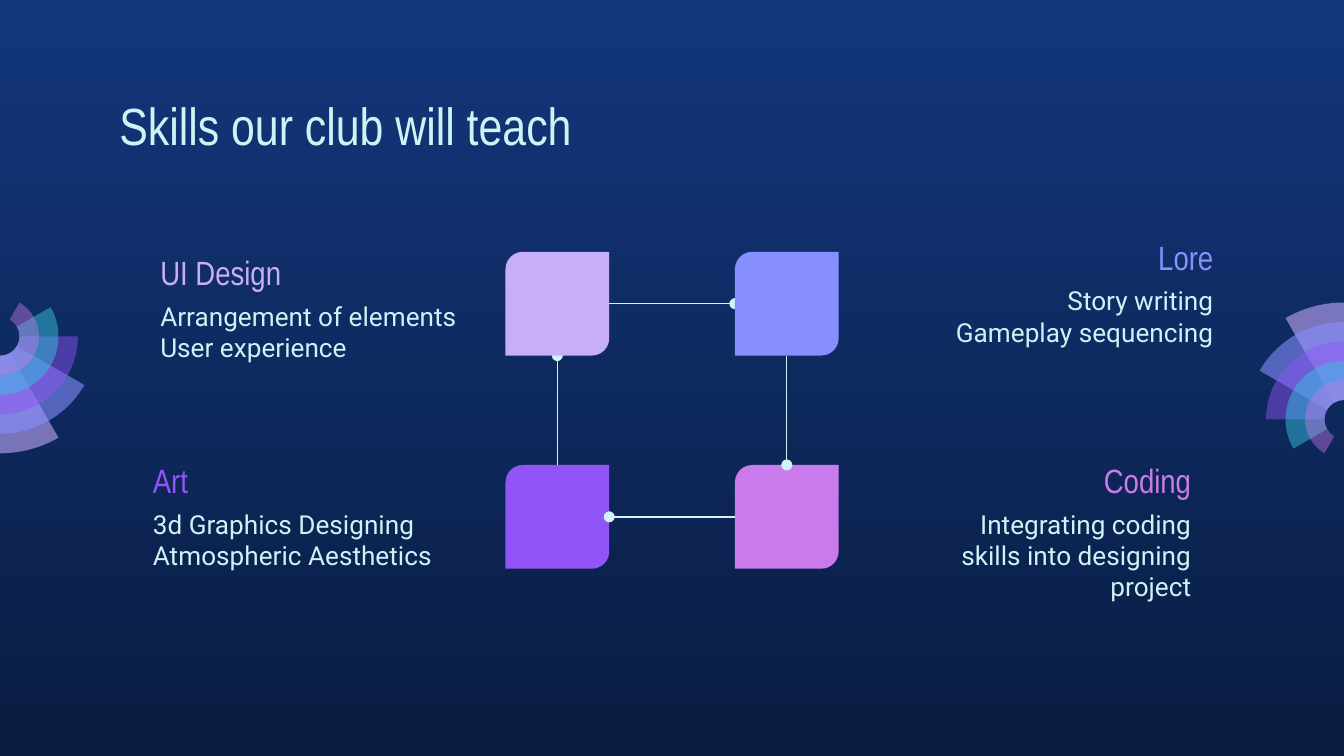
from dataclasses import dataclass
from math import cos, radians, sin, tan

from pptx import Presentation
from pptx.dml.color import RGBColor
from pptx.enum.shapes import MSO_CONNECTOR, MSO_SHAPE
from pptx.enum.text import MSO_ANCHOR, PP_ALIGN
from pptx.oxml.ns import qn
from pptx.util import Pt
from lxml.etree import SubElement


@dataclass(frozen=True)
class Theme:
    background_top: str = "13367C"
    background_bottom: str = "0A1D42"
    text: str = "CEF3F5"
    violet: str = "9154F8"
    lilac: str = "C8AEF8"
    periwinkle: str = "878FFF"
    orchid: str = "CA7BEB"
    fan_lilac: str = "C8ACFD"
    fan_cyan: str = "35C2DF"
    heading_font: str = "Arial Narrow"
    body_font: str = "Roboto"
    title_size: int = 28
    heading_size: int = 18
    body_size: int = 14


THEME = Theme()
SLIDE_WIDTH, SLIDE_HEIGHT = 720, 405
TILE = 55.6
LEFT_COLUMN, RIGHT_COLUMN = 270.8, 393.7
TOP_ROW, BOTTOM_ROW = 134.9, 249.1
FAN_STEP = 10.44
FAN_RINGS = [
    (THEME.fan_lilac, 58),
    (THEME.periwinkle, 58),
    (THEME.violet, 46),
    (THEME.fan_cyan, 49),
    (THEME.orchid, 42),
]


def paint(shape, color):
    shape.fill.solid()
    shape.fill.fore_color.rgb = RGBColor.from_string(color)
    shape.line.fill.background()
    shape.shadow.inherit = False


def set_background(slide):
    fill = slide.background.fill
    fill.gradient()
    fill.gradient_angle = 270
    colors = (THEME.background_top, THEME.background_bottom)
    for stop, color, position in zip(fill.gradient_stops, colors, (0, 1)):
        stop.color.rgb = RGBColor.from_string(color)
        stop.position = position


def arc_points(center, radius, angles):
    def point(angle, tangent=0):
        x = cos(radians(angle)) - tangent * sin(radians(angle))
        y = sin(radians(angle)) + tangent * cos(radians(angle))
        return 100 * (center[0] + radius * x), 100 * (center[1] + radius * y)

    points = [point(angles[0])]
    for start, end in zip(angles, angles[1:]):
        tangent = 4 / 3 * tan(radians(end - start) / 4)
        points += [point(start, tangent), point(end, -tangent), point(end)]
    return points


def curve_lines(outline, lines):
    for first, second, third in zip(lines[::3], lines[1::3], lines[2::3]):
        first.tag = qn("a:cubicBezTo")
        for line in (second, third):
            first.append(line[0])
            outline.remove(line)


def add_sector(slide, center, radius, start, end, color, opacity):
    angles = [start, *[angle for angle in (0, 180) if start < angle < end], end]
    outer = arc_points(center, radius, angles)
    inner = arc_points(center, FAN_STEP, angles[::-1])
    builder = slide.shapes.build_freeform(*outer[0], scale=Pt(0.01))
    builder.add_line_segments(outer[1:] + inner, close=True)
    shape = builder.convert_to_shape()
    outline = next(shape._element.iter(qn("a:path")))
    lines = outline.findall(qn("a:lnTo"))
    curve_lines(outline, lines[:len(outer) - 1])
    curve_lines(outline, lines[len(outer):len(outer) + len(inner) - 1])
    paint(shape, color)
    color_element = shape.fill._xPr.find(qn("a:solidFill"))[0]
    SubElement(color_element, qn("a:alpha"), val=str(opacity * 1000))


def add_fan(slide, center, turn):
    for index, (color, opacity) in enumerate(FAN_RINGS):
        start = turn + 60 - 30 * index if index < 4 else turn - 60
        add_sector(slide, center, FAN_STEP * (6 - index), start, turn + 90, color, opacity)


def add_text(slide, left, top, width, height, lines, font, size, color,
             alignment=PP_ALIGN.LEFT, anchor=MSO_ANCHOR.TOP):
    shape = slide.shapes.add_textbox(Pt(left), Pt(top), Pt(width), Pt(height))
    frame = shape.text_frame
    frame.word_wrap = True
    frame.vertical_anchor = anchor
    frame.margin_left = frame.margin_right = Pt(7.2)
    frame.margin_top = frame.margin_bottom = Pt(7.2)
    for index, line in enumerate(lines):
        paragraph = frame.add_paragraph() if index else frame.paragraphs[0]
        paragraph.alignment = alignment
        run = paragraph.add_run()
        run.text = line
        run.font.name = font
        run.font.size = Pt(size)
        run.font.color.rgb = RGBColor.from_string(color)


def add_skill(slide, edge, top, width, heading, lines, color, alignment=PP_ALIGN.LEFT):
    def left_of(box_width):
        return edge - box_width if alignment == PP_ALIGN.RIGHT else edge

    add_text(slide, left_of(152), top, 152, 37.4, [heading], THEME.heading_font,
             THEME.heading_size, color, alignment, MSO_ANCHOR.BOTTOM)
    add_text(slide, left_of(width), top + 27.2, width, 45.4, lines, THEME.body_font,
             THEME.body_size, THEME.text, alignment)


def add_tile(slide, left, top, color):
    shape = slide.shapes.add_shape(
        MSO_SHAPE.ROUND_2_DIAG_RECTANGLE, Pt(left), Pt(top), Pt(TILE), Pt(TILE))
    shape.adjustments[0] = 0.167
    shape.adjustments[1] = 0
    paint(shape, color)


def add_link(slide, start, end):
    connector = slide.shapes.add_connector(
        MSO_CONNECTOR.STRAIGHT, *[Pt(value) for value in start + end])
    connector.line.width = Pt(0.75)
    connector.line.color.rgb = RGBColor.from_string(THEME.text)
    SubElement(connector.line._get_or_add_ln(), qn("a:tailEnd"), type="oval")
    SubElement(connector._element.spPr, qn("a:effectLst"))


def add_links(slide):
    left_center, right_center = LEFT_COLUMN + TILE / 2, RIGHT_COLUMN + TILE / 2
    top_center, bottom_center = TOP_ROW + TILE / 2, BOTTOM_ROW + TILE / 2
    add_link(slide, (left_center, BOTTOM_ROW), (left_center, TOP_ROW + TILE))
    add_link(slide, (right_center, TOP_ROW + TILE), (right_center, BOTTOM_ROW))
    add_link(slide, (RIGHT_COLUMN, bottom_center), (LEFT_COLUMN + TILE, bottom_center))
    add_link(slide, (LEFT_COLUMN + TILE, top_center), (RIGHT_COLUMN, top_center))


def main():
    presentation = Presentation()
    presentation.slide_width = Pt(SLIDE_WIDTH)
    presentation.slide_height = Pt(SLIDE_HEIGHT)
    slide = presentation.slides.add_slide(presentation.slide_layouts[6])
    set_background(slide)
    add_fan(slide, (SLIDE_WIDTH, 224.7), 180)
    add_fan(slide, (0, 180.2), 0)

    add_text(slide, 56.9, 42.8, 607, 45.4, ["Skills our club will teach"],
             THEME.heading_font, THEME.title_size, THEME.text)
    add_tile(slide, LEFT_COLUMN, BOTTOM_ROW, THEME.violet)
    add_tile(slide, RIGHT_COLUMN, BOTTOM_ROW, THEME.orchid)
    add_links(slide)
    add_tile(slide, LEFT_COLUMN, TOP_ROW, THEME.lilac)
    add_tile(slide, RIGHT_COLUMN, TOP_ROW, THEME.periwinkle)

    add_skill(slide, 78.8, 126.3, 188, "UI Design",
              ["Arrangement of elements", "User experience"], THEME.lilac)
    add_skill(slide, 74.8, 237.8, 179.3, "Art",
              ["3d Graphics Designing", "Atmospheric Aesthetics"], THEME.violet)
    add_skill(slide, 657.1, 118.2, 162, "Lore",
              ["Story writing", "Gameplay sequencing"], THEME.periwinkle, PP_ALIGN.RIGHT)
    add_skill(slide, 645.2, 237.8, 162, "Coding",
              ["Integrating coding skills into designing project"],
              THEME.orchid, PP_ALIGN.RIGHT)
    presentation.save("out.pptx")


if __name__ == "__main__":
    main()
